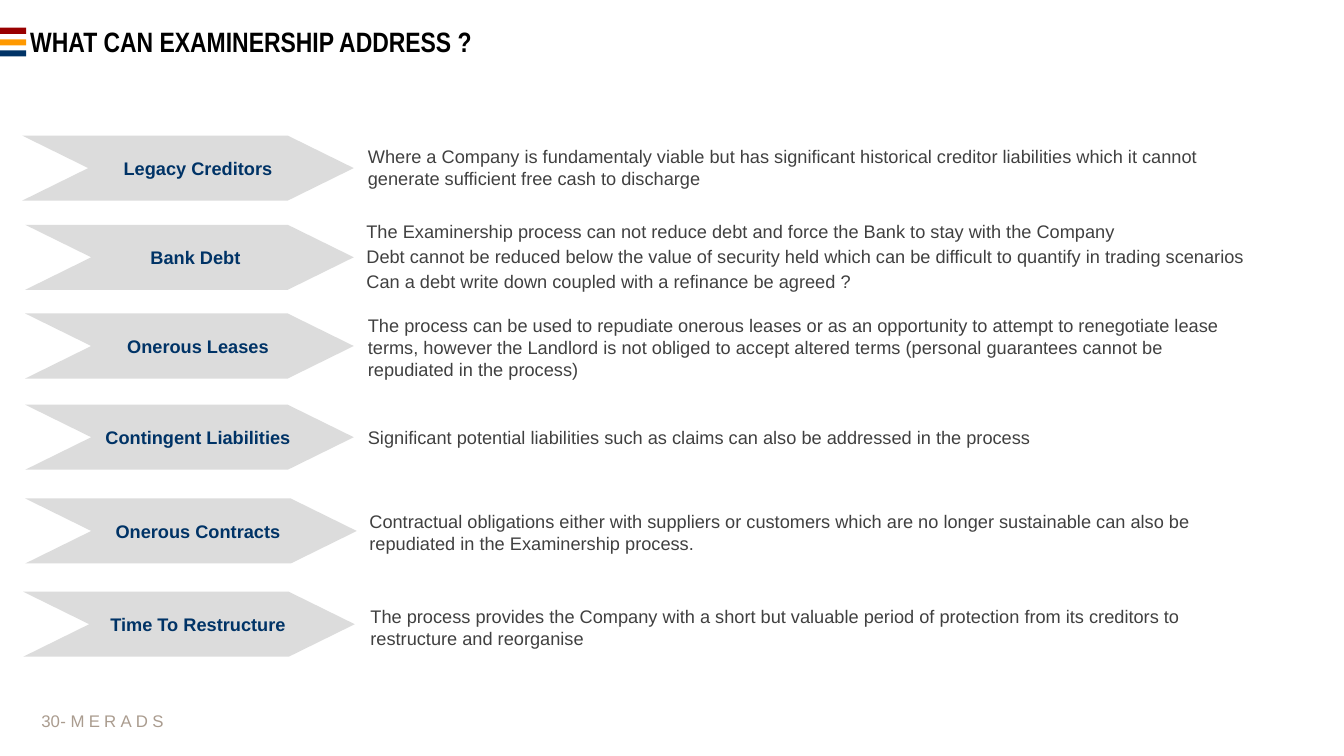
from lxml import etree
from pptx import Presentation
from pptx.dml.color import RGBColor
from pptx.enum.shapes import MSO_SHAPE
from pptx.enum.text import MSO_ANCHOR, MSO_AUTO_SIZE, PP_ALIGN
from pptx.oxml.ns import qn
from pptx.util import Inches, Pt


def set_fill(shape, color):
    shape.fill.solid()
    shape.fill.fore_color.rgb = RGBColor.from_string(color)
    shape.line.fill.background()
    shape.shadow.inherit = False


def write_text(shape, text, size, color, bold=False, font="Arial",
               align=PP_ALIGN.LEFT, anchor=MSO_ANCHOR.TOP, wrap=True, inset=0):
    frame = shape.text_frame
    frame.text = text
    frame.word_wrap = wrap
    frame.auto_size = MSO_AUTO_SIZE.NONE
    frame.vertical_anchor = anchor
    frame.margin_left = frame.margin_right = Inches(inset)
    frame.margin_top = frame.margin_bottom = Inches(inset / 2)
    for paragraph in frame.paragraphs:
        paragraph.alignment = align
        for run in paragraph.runs:
            run.font.name = font
            run.font.size = Pt(size)
            run.font.bold = bold
            run.font.color.rgb = RGBColor.from_string(color)


presentation = Presentation()
presentation.slide_width = Inches(26.67)
presentation.slide_height = Inches(15)
slide = presentation.slides.add_slide(presentation.slide_layouts[5])
shapes = slide.shapes

for top, color in [(0.55, "990000"), (0.78, "FF9900"), (1, "003366")]:
    stripe = shapes.add_shape(MSO_SHAPE.RECTANGLE, 0, Inches(top), Inches(0.52), Inches(0.12))
    set_fill(stripe, color)

title = shapes.title
title.left, title.top = Inches(0.5), Inches(0.46)
title.width, title.height = Inches(25.67), Inches(0.79)
write_text(title, "WHAT CAN EXAMINERSHIP ADDRESS ?", 40, "000000", bold=True,
           font="Arial Narrow", anchor=MSO_ANCHOR.MIDDLE, inset=0.1)
title.text_frame.paragraphs[0].line_spacing = 0.9

page_number = shapes.add_textbox(Inches(0.44), Inches(13.9), Inches(0.75), Inches(0.8))
write_text(page_number, "30", 24, "AA9C8F", align=PP_ALIGN.RIGHT, anchor=MSO_ANCHOR.MIDDLE)
footer = shapes.add_textbox(Inches(1.1), Inches(13.9), Inches(2.29), Inches(0.8))
write_text(footer, "- ", 24, "AA9C8F", anchor=MSO_ANCHOR.MIDDLE, wrap=False, inset=0.1)
firm = footer.text_frame.paragraphs[0].add_run()
firm.text = "MERADS"
firm.font.name = "Arial"
firm.font.size = Pt(24)
firm.font.color.rgb = RGBColor.from_string("AA9C8F")
firm.font._element.set("spc", "600")

topics = [
    ("Legacy Creditors", 0.44, 7.02, 2.69, (7.3, 2.89, 17.69, 0.88),
     ["Where a Company is fundamentaly viable but has significant historical creditor "
      "liabilities which it cannot generate sufficient free cash to discharge"]),
    ("Bank Debt ", 0.5, 7.02, 4.46, (7.27, 4.38, 17.69, 1.42),
     ["The Examinership process can not reduce debt and force the Bank to stay with the Company",
      "Debt cannot be reduced below the value of security held which can be difficult to "
      "quantify in trading scenarios",
      "Can a debt write down coupled with a refinance be agreed ?"]),
    ("Onerous Leases", 0.5, 7.02, 6.22, (7.3, 6.24, 17.32, 1.31),
     ["The process can be used to repudiate onerous leases or as an opportunity to attempt to "
      "renegotiate lease terms, however the Landlord is not obliged to accept altered terms "
      "(personal guarantees cannot be repudiated in the process)"]),
    ("Contingent Liabilities", 0.5, 7.02, 8.03, (7.3, 8.45, 17.69, 0.44),
     ["Significant potential liabilities such as claims can also be addressed in the process"]),
    ("Onerous Contracts", 0.5, 7.08, 9.89, (7.33, 10.12, 17.59, 0.88),
     ["Contractual obligations either with suppliers or customers which are no longer "
      "sustainable can also be repudiated in the Examinership process."]),
    ("Time To Restructure", 0.46, 7.04, 11.74, (7.35, 12.01, 17.59, 0.88),
     ["The process provides the Company with a short but valuable period of protection from "
      "its creditors to restructure and reorganise"]),
]
arrow_height, point_depth = 1.29, 1.31

for label, left, right, top, box, lines in topics:
    middle, bottom = top + arrow_height / 2, top + arrow_height
    outline = [(right - point_depth, top), (right, middle), (right - point_depth, bottom),
               (left, bottom), (left + point_depth, middle)]
    builder = shapes.build_freeform(Inches(left), Inches(top))
    builder.add_line_segments([(Inches(x), Inches(y)) for x, y in outline], close=True)
    arrow = builder.convert_to_shape()
    set_fill(arrow, "D9D9D9")
    color_element = arrow._element.spPr.find(qn("a:solidFill"))[0]
    etree.SubElement(color_element, qn("a:alpha"), val="90000")

    caption = shapes.add_textbox(Inches(2.07), Inches(middle - 0.22), Inches(3.72), Inches(0.44))
    write_text(caption, label, 26, "003366", bold=True, align=PP_ALIGN.CENTER,
               anchor=MSO_ANCHOR.MIDDLE, wrap=False)

    description = shapes.add_textbox(*[Inches(length) for length in box])
    write_text(description, "\n".join(lines), 26, "404040")
    if len(lines) > 1:
        for paragraph in description.text_frame.paragraphs:
            paragraph.space_after = Pt(4)

presentation.save("out.pptx")
